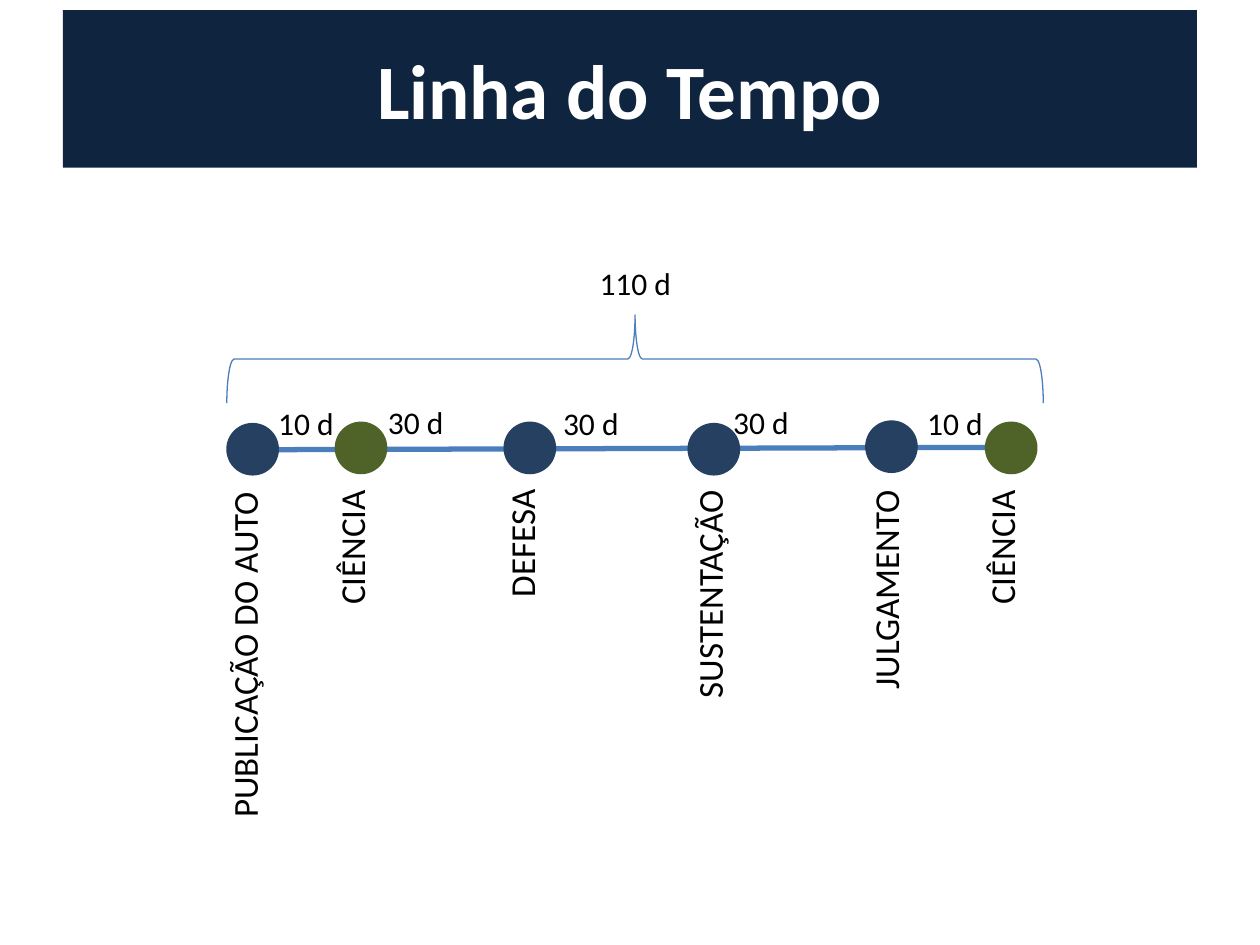
from lxml import etree
from pptx import Presentation
from pptx import util as u
from pptx.dml.color import RGBColor
from pptx.enum import shapes, text
from pptx.oxml.ns import qn

NAVY, BLUE, GREEN, LINE = "0F243E", "254061", "4F6228", "4B7EBC"
DOT = 0.39
LABEL_TOP, LABEL_WIDTH = 3.88, 0.54

# name, dot left, dot top, dot colour, label left, label length
MILESTONES = [
    ("PUBLICAÇÃO DO AUTO", 1.81, 3.37, BLUE, 1.72, 2.71),
    ("CIÊNCIA", 2.67, 3.36, GREEN, 2.57, 1.02),
    ("DEFESA", 4.01, 3.36, BLUE, 3.92, 0.96),
    ("SUSTENTAÇÃO", 5.47, 3.37, BLUE, 5.41, 1.76),
    ("JULGAMENTO", 6.88, 3.35, BLUE, 6.81, 1.69),
    ("CIÊNCIA", 7.83, 3.36, GREEN, 7.73, 1.02),
]
# duration, left, top, width
DURATIONS = [
    ("10 d", 2.11, 3.16, 0.65),
    ("30 d", 2.98, 3.15, 0.65),
    ("30 d", 4.37, 3.16, 0.65),
    ("30 d", 5.72, 3.15, 0.65),
    ("10 d", 7.26, 3.16, 0.65),
    ("110 d", 4.66, 2.05, 0.78),
]


def colour(value):
    return RGBColor.from_string(value)


class TimelineSlide:
    font = "Calibri"

    def __init__(self, slide):
        self.slide = slide

    def set_text(self, shape, content, size, value="000000", bold=False):
        shape.text_frame.text = content
        font = shape.text_frame.paragraphs[0].runs[0].font
        font.name, font.size, font.bold = self.font, u.Pt(size), bold
        font.color.rgb = colour(value)

    def shape(self, kind, left, top, width, height, fill=None, line=None, weight=2):
        shape = self.slide.shapes.add_shape(
            kind, *map(u.Inches, (left, top, width, height)))
        shape.shadow.inherit = False
        if fill:
            shape.fill.solid()
            shape.fill.fore_color.rgb = colour(fill)
        else:
            shape.fill.background()
        if line:
            shape.line.color.rgb = colour(line)
            shape.line.width = u.Pt(weight)
        else:
            shape.line.fill.background()
        return shape

    def title(self, content):
        banner = self.shape(shapes.MSO_SHAPE.RECTANGLE, 0.5, 0.08, 9, 1.25, NAVY)
        self.set_text(banner, content, 44, "FFFFFF", bold=True)
        banner.text_frame.vertical_anchor = text.MSO_ANCHOR.MIDDLE
        banner.text_frame.paragraphs[0].alignment = text.PP_ALIGN.CENTER

    def axis(self, start, end):
        axis = self.slide.shapes.add_connector(
            shapes.MSO_CONNECTOR.STRAIGHT, *map(u.Inches, start + end))
        axis.line.color.rgb = colour(LINE)
        axis.line.width = u.Pt(3)
        etree.SubElement(axis.element.spPr, qn("a:effectLst"))

    def label(self, content, left, top, width, height, size, upward=False):
        box = self.slide.shapes.add_textbox(
            *map(u.Inches, (left, top, width, height)))
        self.set_text(box, content, size)
        box.text_frame.word_wrap = False
        box.text_frame.auto_size = text.MSO_AUTO_SIZE.SHAPE_TO_FIT_TEXT
        if upward:
            box.element.txBody.bodyPr.set("vert", "vert270")

    def milestone(self, name, left, top, fill, label_left, length):
        self.shape(shapes.MSO_SHAPE.OVAL, left, top, DOT, DOT, fill, fill)
        self.label(name, label_left, LABEL_TOP, LABEL_WIDTH, length, 20, upward=True)

    def brace(self, left, top, width, height):
        """Draw a left brace turned to open downwards; the box is before turning."""
        brace = self.shape(shapes.MSO_SHAPE.LEFT_BRACE, left, top, width, height,
                           line=LINE, weight=0.75)
        brace.rotation = 90


def main():
    presentation = Presentation()
    presentation.slide_width = u.Inches(10)
    presentation.slide_height = u.Inches(7.5)
    timeline = TimelineSlide(
        presentation.slides.add_slide(presentation.slide_layouts[6]))

    timeline.title("Linha do Tempo")
    timeline.axis((1.97, 3.57), (8.04, 3.55))
    for milestone in MILESTONES:
        timeline.milestone(*milestone)
    timeline.brace(4.69, -0.39, 0.7, 6.48)
    for duration, left, top, width in DURATIONS:
        timeline.label(duration, left, top, width, 0.4, 18)

    presentation.save("out.pptx")


if __name__ == "__main__":
    main()
